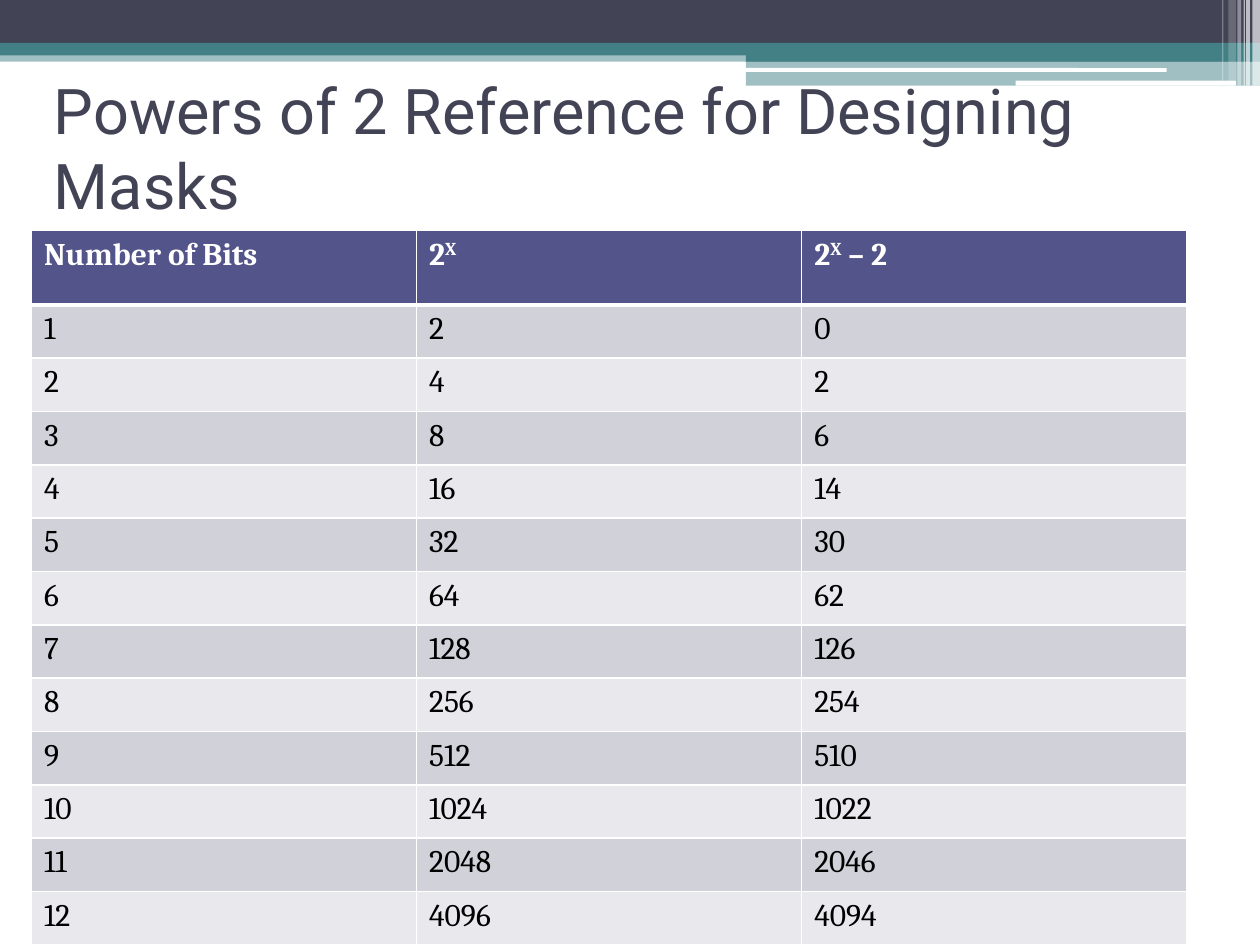
from dataclasses import dataclass

from lxml.etree import SubElement
from pptx import Presentation
from pptx.dml.color import RGBColor
from pptx.enum.shapes import MSO_SHAPE
from pptx.enum.text import MSO_ANCHOR
from pptx.oxml.ns import qn
from pptx.util import Inches, Pt


@dataclass(frozen=True)
class Theme:
    navy: str = "424456"
    teal: str = "438086"
    white: str = "FFFFFF"
    black: str = "000000"
    header: str = "53548A"
    bands: tuple = ("D1D1DA", "E9E9ED")
    title_font: str = "Roboto"
    table_font: str = "Cambria"
    title_size: int = 36
    table_size: int = 18
    thin: int = 1
    thick: int = 3


THEME = Theme()

# Content: header cells are lists of (text, is superscript)
TITLE = "Powers of 2 Reference for Designing Masks"
HEADERS = [
    [("Number of Bits", False)],
    [("2", False), ("X", True)],
    [("2", False), ("X", True), (" – 2", False)],
]
ROWS = [(bits, 2 ** bits, 2 ** bits - 2) for bits in range(1, 13)]

# Layout grid: the slide is 100 units wide and 75 units high
GRID_WIDTH, GRID_HEIGHT = 100, 75
UNIT = Inches(10) / GRID_WIDTH
TITLE_BOX = (3.3, 5.8, 90, 11.7)
TABLE_LEFT, TABLE_TOP, TABLE_WIDTH = 2.5, 18.3, 91.7
HEADER_HEIGHT = 5.9

# Banner: left, top, width, height, colour, opacity in percent
BANDS = [
    (0, 4, 100, 0.9, THEME.teal, 50),
    (0, 0, 100, 3.4, THEME.navy, 100),
    (0, 3.4, 100, 1, THEME.teal, 100),
    (59.2, 3.9, 40.8, 1, THEME.teal, 100),
    (59.2, 4.8, 40.8, 2, THEME.teal, 50),
]
# Rounded white slits: left, top, width, height
SLITS = [(59.1, 5.4, 33.5, 0.3), (80.6, 6.4, 17.5, 0.4)]
# White stripes from the top edge: left, width, height, opacity
STRIPES = [
    (99.4, 0.6, 6.8, 65),
    (98.9, 0.3, 6.8, 65),
    (98.7, 0.1, 6.8, 60),
    (98.2, 0.3, 6.8, 40),
    (97.5, 0.6, 6.4, 20),
    (97, 0.1, 6.4, 30),
]


def units(*values):
    return [round(value * UNIT) for value in values]


def add_bar(page, place, colour, opacity=100, kind=MSO_SHAPE.RECTANGLE):
    bar = page.shapes.add_shape(kind, *units(*place))
    bar.shadow.inherit = False
    bar.line.fill.background()
    bar.fill.solid()
    bar.fill.fore_color.rgb = RGBColor.from_string(colour)
    if opacity < 100:
        tint = bar.fill._xPr.find(f".//{qn('a:srgbClr')}")
        SubElement(tint, qn("a:alpha"), val=str(opacity * 1000))


def style_span(span, font, size, colour, bold=False):
    span.font.name = font
    span.font.size = Pt(size)
    span.font.bold = bold
    span.font.color.rgb = RGBColor.from_string(colour)


def style_cell(cell, fill, top=THEME.thin, bottom=THEME.thin):
    # Borders come before the fill in the cell properties
    properties = cell._tc.get_or_add_tcPr()
    widths = {"L": THEME.thin, "R": THEME.thin, "T": top, "B": bottom}
    for side, width in widths.items():
        line = SubElement(properties, qn(f"a:ln{side}"), w=str(Pt(width)))
        paint = SubElement(line, qn("a:solidFill"))
        SubElement(paint, qn("a:srgbClr"), val=THEME.white)
    cell.fill.solid()
    cell.fill.fore_color.rgb = RGBColor.from_string(fill)


def add_banner(page):
    for *place, colour, opacity in BANDS:
        add_bar(page, place, colour, opacity)
    for place in SLITS:
        add_bar(page, place, THEME.white, kind=MSO_SHAPE.ROUNDED_RECTANGLE)
    for left, width, height, opacity in STRIPES:
        add_bar(page, (left, 0, width, height), THEME.white, opacity)


def add_title(page):
    box = page.shapes.add_textbox(*units(*TITLE_BOX))
    frame = box.text_frame
    frame.word_wrap = True
    frame.vertical_anchor = MSO_ANCHOR.MIDDLE
    frame.text = TITLE
    style_span(frame.paragraphs[0].runs[0], THEME.title_font,
               THEME.title_size, THEME.navy)


def add_powers_table(page):
    height = GRID_HEIGHT - TABLE_TOP
    place = units(TABLE_LEFT, TABLE_TOP, TABLE_WIDTH, height)
    table = page.shapes.add_table(len(ROWS) + 1, len(HEADERS), *place).table
    for column in table.columns:
        column.width = units(TABLE_WIDTH / len(HEADERS))[0]
    row_height = (height - HEADER_HEIGHT) / len(ROWS)
    for index, row in enumerate(table.rows):
        row.height = units(row_height if index else HEADER_HEIGHT)[0]

    # Header row
    for column, parts in enumerate(HEADERS):
        cell = table.cell(0, column)
        style_cell(cell, THEME.header, bottom=THEME.thick)
        para = cell.text_frame.paragraphs[0]
        for text, raised in parts:
            span = para.add_run()
            span.text = text
            style_span(span, THEME.table_font, THEME.table_size,
                       THEME.white, bold=True)
            if raised:
                span.font._element.set("baseline", "30000")

    # Banded number rows
    for index, values in enumerate(ROWS):
        for column, value in enumerate(values):
            cell = table.cell(index + 1, column)
            style_cell(cell, THEME.bands[index % 2],
                       top=THEME.thin if index else THEME.thick)
            cell.text_frame.text = str(value)
            style_span(cell.text_frame.paragraphs[0].runs[0],
                       THEME.table_font, THEME.table_size, THEME.black)


def main():
    deck = Presentation()
    deck.slide_width, deck.slide_height = units(GRID_WIDTH, GRID_HEIGHT)
    page = deck.slides.add_slide(deck.slide_layouts[6])
    add_banner(page)
    add_title(page)
    add_powers_table(page)
    deck.save("out.pptx")


if __name__ == "__main__":
    main()
